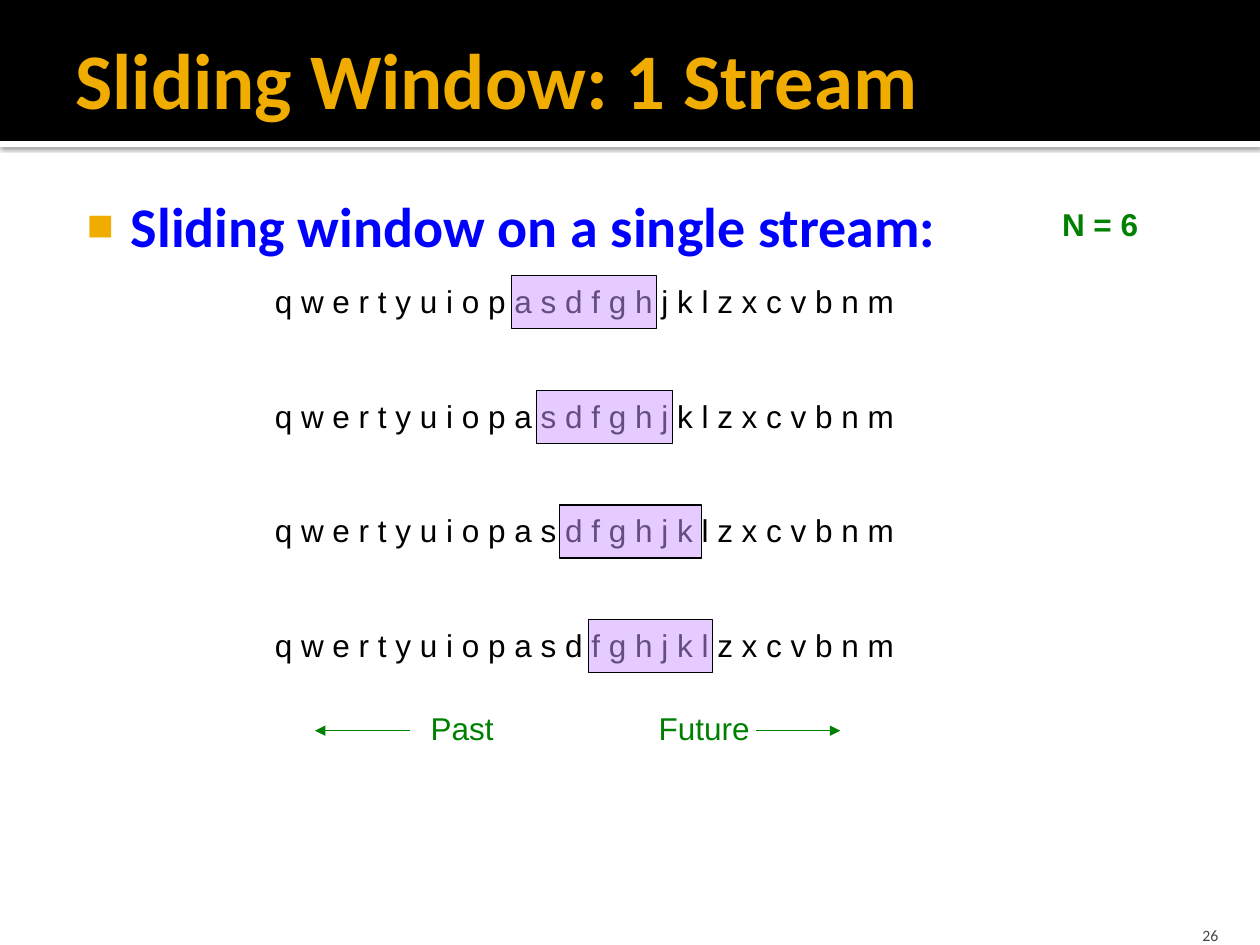
from lxml import etree
from pptx import Presentation
from pptx.dml.color import RGBColor
from pptx.enum.shapes import MSO_CONNECTOR, MSO_SHAPE
from pptx.enum.text import MSO_ANCHOR, PP_ALIGN
from pptx.oxml.ns import qn
from pptx.util import Cm, Pt

RECTANGLE = MSO_SHAPE.RECTANGLE
STRAIGHT = MSO_CONNECTOR.STRAIGHT
TOP, MIDDLE, BOTTOM = MSO_ANCHOR.TOP, MSO_ANCHOR.MIDDLE, MSO_ANCHOR.BOTTOM
LEFT, RIGHT = PP_ALIGN.LEFT, PP_ALIGN.RIGHT


class Theme:
    heading_font, stream_font = "Calibri", "Arial"
    title_size, bullet_size, stream_size, number_size = 45, 32, 18, 9
    black, white, gold = "000000", "FFFFFF", "F0AD00"
    blue, green, gray, violet = "0000FF", "008000", "454545", "CC99FF"
    line_width = Pt(0.75)


# Content, lengths in centimetres
TITLE = "Sliding Window: 1 Stream"
BULLET = "Sliding window on a single stream:"
WINDOW_SIZE = "N = 6"
PAGE = "26"
STREAM = " ".join("qwertyuiopasdfghjklzxcvbnm")
WINDOWS = [(10.31, 2.92), (10.82, 2.74), (11.28, 2.87), (11.86, 2.51)]  # left, width
DIRECTIONS = [  # label, label left, label width, arrow from, arrow to
    ("Past", 8.43, 1.8, 8.26, 6.35),
    ("Future", 13.03, 2.4, 15.24, 16.94),
]
SLIDE_WIDTH, SLIDE_HEIGHT = 25.4, 19.05
HEADER_HEIGHT, STRIP_HEIGHT = 2.84, 0.13
STREAM_LEFT, STREAM_TOP, STREAM_WIDTH, STREAM_STEP = 5.29, 5.56, 13.56, 2.31
LINE_HEIGHT, WINDOW_HEIGHT = 1.02, 1.07
DIRECTION_TOP, ARROW_Y = 14.17, 14.73
INSETS = (0.25, 0.13, 0.25, 0.13)


def color(value):
    return RGBColor.from_string(value)


def add_text(shapes, text, box, size, ink, font=Theme.stream_font, bold=False,
             wrap=False, anchor=TOP, align=LEFT, insets=INSETS):
    frame = shapes.add_textbox(*map(Cm, box)).text_frame
    frame.word_wrap = wrap
    frame.vertical_anchor = anchor
    (frame.margin_left, frame.margin_top,
     frame.margin_right, frame.margin_bottom) = map(Cm, insets)
    paragraph = frame.paragraphs[0]
    paragraph.text = text
    paragraph.alignment = align
    paragraph.font.name, paragraph.font.size = font, Pt(size)
    paragraph.font.bold, paragraph.font.color.rgb = bold, color(ink)
    return paragraph


def add_box(shapes, box, fill, outline=None):
    shape = shapes.add_shape(RECTANGLE, *map(Cm, box))
    shape.shadow.inherit = False
    shape.fill.solid()
    shape.fill.fore_color.rgb = color(fill)
    if outline:
        shape.line.color.rgb = color(outline)
        shape.line.width = Theme.line_width
    else:
        shape.line.fill.background()
    return shape


def add_child(parent, tag, **attributes):
    return etree.SubElement(parent, qn(tag), attributes)


def add_alpha(parent, percent):
    add_child(parent, "a:alpha", val=str(percent * 1000))


def add_strip_shadow(shape):
    effects = shape._element.spPr.find(qn("a:effectLst"))
    shadow = add_child(effects, "a:outerShdw", blurRad=str(Pt(2.5)), dist=str(Pt(0.8)),
                       dir="5400000", algn="tl", rotWithShape="0")
    add_alpha(add_child(shadow, "a:srgbClr", val=Theme.black), 60)


def add_bullet(paragraph):
    properties = paragraph._p.get_or_add_pPr()
    properties.set("marL", str(Cm(1.22)))
    properties.set("indent", str(Cm(-0.89)))
    add_child(add_child(properties, "a:buClr"), "a:srgbClr", val=Theme.gold)
    add_child(properties, "a:buSzPct", val="80000")
    add_child(properties, "a:buFont", typeface=Theme.stream_font)
    add_child(properties, "a:buChar", char="■")


def add_arrow(shapes, start, end):
    arrow = shapes.add_connector(STRAIGHT, Cm(start), Cm(ARROW_Y), Cm(end), Cm(ARROW_Y))
    arrow.line.color.rgb = color(Theme.green)
    arrow.line.width = Theme.line_width
    add_child(arrow.line._get_or_add_ln(), "a:tailEnd", type="triangle")
    add_child(arrow._element.spPr, "a:effectLst")


def main():
    presentation = Presentation()
    presentation.slide_width, presentation.slide_height = Cm(SLIDE_WIDTH), Cm(SLIDE_HEIGHT)
    shapes = presentation.slides.add_slide(presentation.slide_layouts[6]).shapes

    # Header band and title
    strip = add_box(shapes, (0, HEADER_HEIGHT, SLIDE_WIDTH, STRIP_HEIGHT), Theme.white)
    add_strip_shadow(strip)
    add_box(shapes, (0, 0, SLIDE_WIDTH, HEADER_HEIGHT), Theme.black)
    add_text(shapes, TITLE, (1.27, 0.2, 22.86, 2.74), Theme.title_size, Theme.gold,
             Theme.heading_font, bold=True, wrap=True, anchor=MIDDLE,
             insets=(0.25, 0.13, 0.13, 0.13))

    # Bullet and page number
    bullet = add_text(shapes, BULLET, (1.27, 3.61, 22.86, 14.6), Theme.bullet_size,
                      Theme.blue, Theme.heading_font, bold=True, wrap=True,
                      insets=(0.15, 0.25, 0.25, 0.13))
    add_bullet(bullet)
    add_text(shapes, PAGE, (22.78, 18.29, 2.03, 0.76), Theme.number_size, Theme.gray,
             Theme.heading_font, wrap=True, anchor=BOTTOM, align=RIGHT,
             insets=(0.25, 0.13, 0.25, 0))

    # Stream with its window moving one letter per row
    for row, (window_left, window_width) in enumerate(WINDOWS):
        top = STREAM_TOP + row * STREAM_STEP
        group = shapes.add_group_shape().shapes
        add_text(group, STREAM, (STREAM_LEFT, top, STREAM_WIDTH, LINE_HEIGHT),
                 Theme.stream_size, Theme.black)
        window = add_box(group, (window_left, top, window_width, WINDOW_HEIGHT),
                         Theme.violet, Theme.black)
        add_alpha(window._element.spPr.find(qn("a:solidFill"))[0], 50)

    # Directions of time
    for label, left, width, start, end in DIRECTIONS:
        add_text(shapes, label, (left, DIRECTION_TOP, width, LINE_HEIGHT),
                 Theme.stream_size, Theme.green)
        add_arrow(shapes, start, end)

    # Window size
    add_text(shapes, WINDOW_SIZE, (21.16, 4.01, 2.06, LINE_HEIGHT),
             Theme.stream_size, Theme.green, bold=True)

    presentation.save("out.pptx")


if __name__ == "__main__":
    main()
